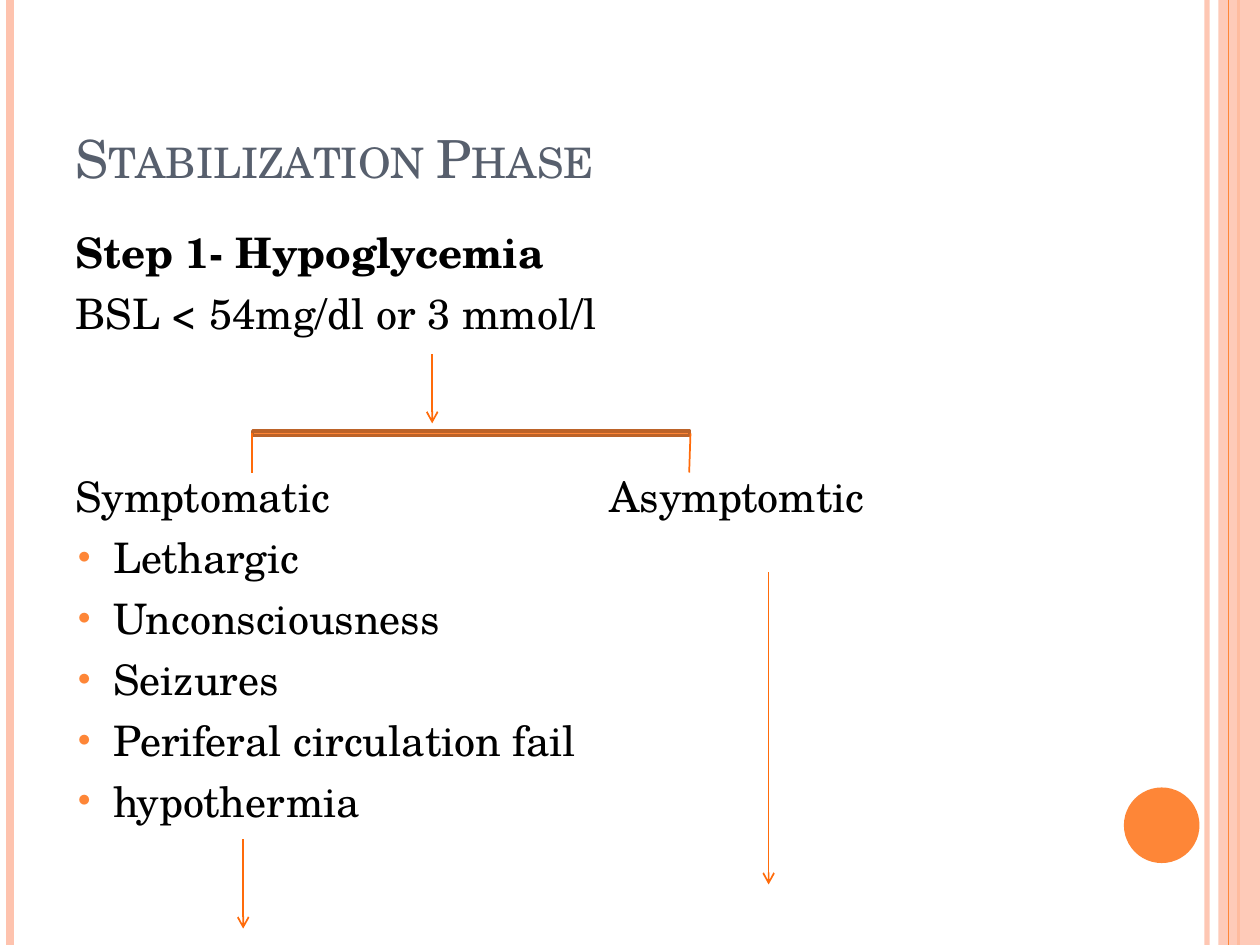
from lxml.etree import SubElement
from pptx import Presentation
from pptx.dml.color import RGBColor
from pptx.enum.shapes import MSO_CONNECTOR, MSO_SHAPE
from pptx.enum.text import MSO_ANCHOR, MSO_AUTO_SIZE, PP_ALIGN
from pptx.oxml.ns import qn
from pptx.util import Inches, Pt

FONT = "TeX Gyre Schola"
PEACH = RGBColor(0xFE, 0xC3, 0xAE)
ORANGE = RGBColor(0xFE, 0x86, 0x37)
ARROW_ORANGE = RGBColor(0xFF, 0x6B, 0x0A)
BROWN = RGBColor(0xBC, 0x63, 0x29)
SLATE = RGBColor(0x57, 0x5F, 0x6D)
BLACK = RGBColor(0, 0, 0)

prs = Presentation()
prs.slide_width, prs.slide_height = Inches(10), Inches(7.5)
slide = prs.slides.add_slide(prs.slide_layouts[5])
shapes = slide.shapes


def add_line(x1, y1, x2, y2, color, width, arrow=False):
    line = shapes.add_connector(
        MSO_CONNECTOR.STRAIGHT, Inches(x1), Inches(y1), Inches(x2), Inches(y2))
    line.line.color.rgb = color
    line.line.width = Pt(width)
    properties = line._element.spPr
    if arrow:
        SubElement(properties.find(qn("a:ln")), qn("a:tailEnd"), type="arrow")
    SubElement(properties, qn("a:effectLst"))
    return line


def add_filled(preset, left, top, width, height, color):
    shape = shapes.add_shape(
        preset, Inches(left), Inches(top), Inches(width), Inches(height))
    shape.shadow.inherit = False
    shape.fill.solid()
    shape.fill.fore_color.rgb = color
    shape.line.fill.background()
    return shape


# Side stripes and page disc
right_stripe = add_line(9.58, 0, 9.58, 7.5, PEACH, 3)
add_line(0.08, 0, 0.08, 7.5, PEACH, 4.5)
add_line(9.83, 0, 9.83, 7.5, ORANGE, 1.5)
right_band = add_filled(MSO_SHAPE.RECTANGLE, 9.67, 0, 0.33, 7.5, PEACH)
add_line(9.75, 0, 9.75, 7.5, ORANGE, 0.75)
add_filled(MSO_SHAPE.OVAL, 8.92, 6.25, 0.6, 0.6, ORANGE)
for translucent, opacity in ((right_stripe, 93000), (right_band, 87000)):
    color = next(translucent._element.spPr.iter(qn("a:srgbClr")))
    SubElement(color, qn("a:alpha"), val=str(opacity))

# Title
title = shapes.title
title.left, title.top = Inches(0.5), Inches(0.3)
title.width, title.height = Inches(8.17), Inches(1.25)
title.text_frame.text = "Stabilization Phase"
title.text_frame.vertical_anchor = MSO_ANCHOR.BOTTOM
title.text_frame.auto_size = MSO_AUTO_SIZE.NONE
heading = title.text_frame.paragraphs[0]
heading.alignment = PP_ALIGN.LEFT
heading_run = heading.runs[0]
heading_run.font.name = FONT
heading_run.font.size = Pt(30)
heading_run.font.color.rgb = SLATE
heading_run.font._element.set("cap", "small")

# Step, criterion, branch labels and symptoms
branches = "Symptomatic\tAsymptomtic"
symptoms = ["Lethargic", "Unconsciousness", "Seizures",
            "Periferal circulation fail", "hypothermia"]
step_lines = ["Step 1- Hypoglycemia", "BSL < 54mg/dl or 3 mmol/l", branches] + symptoms
body = shapes.add_textbox(Inches(0.5), Inches(1.75), Inches(8.17), Inches(5.33)).text_frame
body.word_wrap = True
body.text = "\n".join(step_lines)
for index, paragraph in enumerate(body.paragraphs):
    paragraph.space_before = Pt(6)
    paragraph.font.size = Pt(24)
    for run in paragraph.runs:
        run.font.name = FONT
        run.font.size = Pt(24)
        run.font.color.rgb = BLACK
        run.font.bold = index == 0
    layout = paragraph._p.get_or_add_pPr()
    if step_lines[index] == branches:
        paragraph.space_before = Pt(75.7)  # room for the branching arrow
        tabs = SubElement(layout, qn("a:tabLst"))
        SubElement(tabs, qn("a:tab"), pos=str(Inches(4.24)), algn="l")
    elif step_lines[index] in symptoms:
        layout.set("marL", str(Inches(0.3)))
        layout.set("indent", str(Inches(-0.3)))
        bullet_color = SubElement(layout, qn("a:buClr"))
        SubElement(bullet_color, qn("a:srgbClr"), val=str(ORANGE))
        SubElement(layout, qn("a:buSzPct"), val="70000")
        SubElement(layout, qn("a:buFont"), typeface=FONT)
        SubElement(layout, qn("a:buChar"), char="•")
    # Default run properties close the paragraph properties
    defaults = layout.find(qn("a:defRPr"))
    layout.remove(defaults)
    layout.append(defaults)

# Flow arrows
for x, top, bottom in ((3.43, 2.81, 3.36), (1.93, 6.66, 7.37), (6.1, 4.54, 7.02)):
    add_line(x, top, x, bottom, ARROW_ORANGE, 1, arrow=True)

# Branch bar with its two drops
branch_bar = add_filled(MSO_SHAPE.MATH_MINUS, 1.38, 3.36, 4.72, 0.16, ORANGE)
branch_bar.line.color.rgb = BROWN
branch_bar.line.width = Pt(2)
add_line(2, 3.44, 2, 3.75, ARROW_ORANGE, 1)
add_line(5.48, 3.44, 5.47, 3.75, ARROW_ORANGE, 1)

prs.save("out.pptx")
